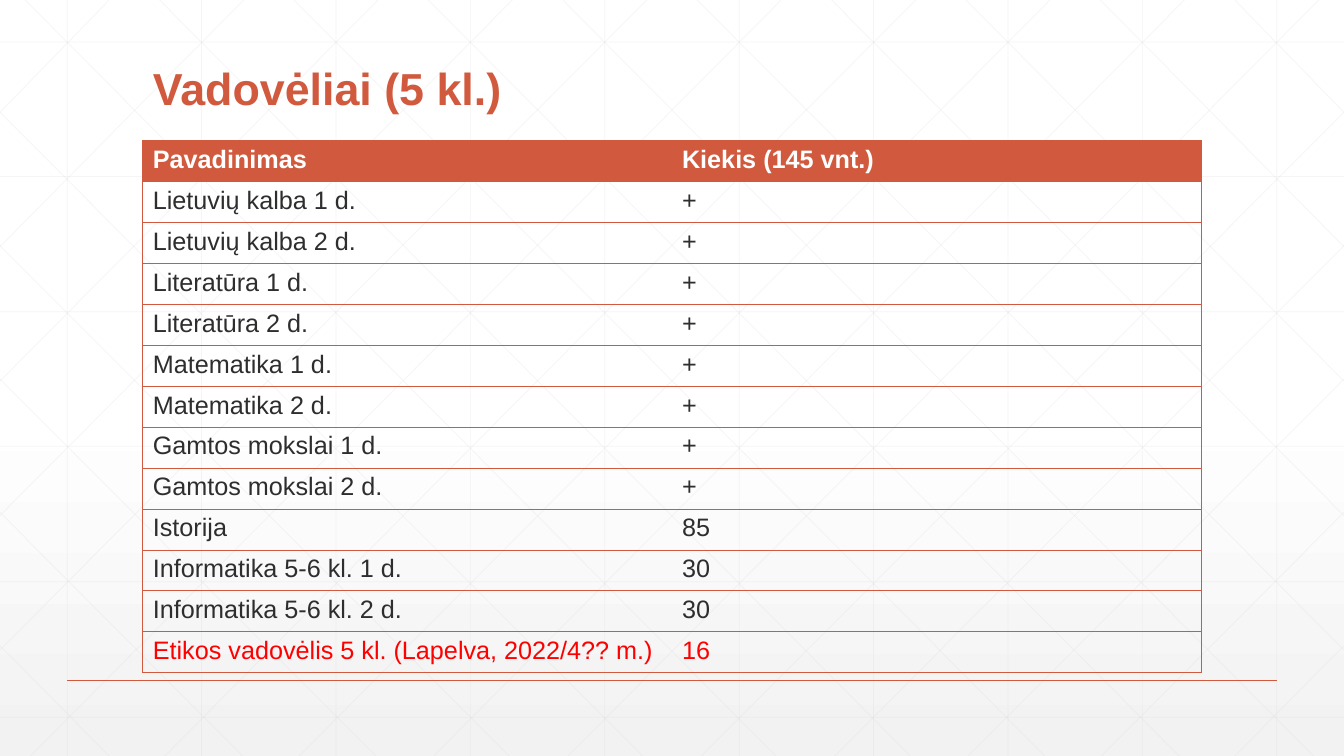
from lxml.etree import SubElement
from pptx import Presentation
from pptx.dml.color import RGBColor
from pptx.enum.shapes import MSO_CONNECTOR
from pptx.enum.text import MSO_ANCHOR, MSO_AUTO_SIZE, PP_ALIGN
from pptx.oxml.ns import qn
from pptx.util import Pt

PX = 9525
WIDTH, HEIGHT = 1280, 720
FONT = "Arial"
ACCENT, TEXT, ALERT, WHITE, GRID = "D15A3E", "2D2E2D", "FF0000", "FFFFFF", "D9D9D9"

HEADER = ("Pavadinimas", "Kiekis (145 vnt.)")
BOOKS = [
    ("Lietuvių kalba 1 d.", "+"),
    ("Lietuvių kalba 2 d.", "+"),
    ("Literatūra 1 d.", "+"),
    ("Literatūra 2 d.", "+"),
    ("Matematika 1 d.", "+"),
    ("Matematika 2 d.", "+"),
    ("Gamtos mokslai 1 d.", "+"),
    ("Gamtos mokslai 2 d.", "+"),
    ("Istorija", "85"),
    ("Informatika 5-6 kl. 1 d.", "30"),
    ("Informatika 5-6 kl. 2 d.", "30"),
]
ETHICS = ("Etikos vadovėlis 5 kl. (Lapelva, 2022/4?? m.)", "16")


def px(*values):
    return [round(v * PX) for v in values]


def rgb(color):
    return RGBColor.from_string(color)


def style(p, size, color, bold=False):
    f = p.font
    f.name, f.size, f.bold = FONT, Pt(size), bold
    f.color.rgb = rgb(color)


def add_line(shapes, ends, color, width, alpha=None):
    """Draw a straight line; alpha is its opacity in percent."""
    line = shapes.add_connector(MSO_CONNECTOR.STRAIGHT, *px(*ends))
    line.line.color.rgb = rgb(color)
    line.line.width = Pt(width)
    sppr = line.element.spPr
    if alpha is not None:
        clr = sppr.find(f".//{qn('a:srgbClr')}")
        SubElement(clr, qn("a:alpha"), val=str(alpha * 1000))
    SubElement(sppr, qn("a:effectLst"))


def grid_lines():
    """List the ends of the square grid and of its mirrored diagonals."""
    verticals = [(x, 0, x, HEIGHT) for x in range(64, WIDTH, 128)]
    levels = [40 + 643 * i // 5 for i in range(6)]
    horizontals = [(0, y, WIDTH, y) for y in levels]
    full = [(24 + 128 * i, 0, 739 + 128 * i, HEIGHT) for i in range(5)]
    upper = [(664 + 128 * i, 0, WIDTH, 619 - 128 * i) for i in range(5)]
    lower = [(0, 107 + 127 * i, 612 - 127 * i, HEIGHT) for i in range(5)]
    falling = full + upper + lower
    rising = [(WIDTH - x1, y1, WIDTH - x2, y2) for x1, y1, x2, y2 in falling]
    return verticals + horizontals + falling + rising


def add_backdrop(s):
    fill = s.background.fill
    fill.gradient()
    fill.gradient_angle = 270
    for stop, color, position in zip(fill.gradient_stops, (WHITE, "F2F2F2"), (0.53, 1)):
        stop.color.rgb = rgb(color)
        stop.position = position
    grid = s.shapes.add_group_shape()
    for ends in grid_lines():
        add_line(grid.shapes, ends, GRID, 0.5, 25)
    add_line(s.shapes, (64, 648, 1216, 648), ACCENT, 1)


def add_title(s, text, left, top, width, height):
    sp = s.shapes.title
    sp.element.getparent().append(sp.element)  # bring in front of the grid
    sp.left, sp.top, sp.width, sp.height = px(left, top, width, height)
    tf = sp.text_frame
    tf.text = text
    tf.word_wrap = True
    tf.auto_size = MSO_AUTO_SIZE.NONE
    tf.vertical_anchor = MSO_ANCHOR.BOTTOM
    p = tf.paragraphs[0]
    p.alignment = PP_ALIGN.LEFT
    p.line_spacing = 0.9
    style(p, 32, ACCENT, True)


def set_borders(cell, visible):
    """Draw the visible sides of a cell and clear the others."""
    tcpr = cell._tc.get_or_add_tcPr()
    for i, side in enumerate("LRTB"):
        ln = SubElement(tcpr, qn(f"a:ln{side}"), w=str(Pt(0.5)))
        if side in visible:
            SubElement(SubElement(ln, qn("a:solidFill")), qn("a:srgbClr"), val=ACCENT)
        else:
            SubElement(ln, qn("a:noFill"))
        tcpr.insert(i, ln)


def add_book_table(s, left, top, width, row_height):
    rows = [HEADER, *BOOKS, ETHICS]
    box = px(left, top, width, row_height * len(rows))
    table = s.shapes.add_table(len(rows), len(HEADER), *box).table
    table.horz_banding = False
    for row, values in zip(table.rows, rows):
        row.height = px(row_height)[0]
        is_header = values is HEADER
        color = WHITE if is_header else ALERT if values is ETHICS else TEXT
        for cell, value, outer in zip(row.cells, values, "LR"):
            cell.text = value
            style(cell.text_frame.paragraphs[0], 18, color, is_header)
            if is_header:
                cell.fill.solid()
                cell.fill.fore_color.rgb = rgb(ACCENT)
            else:
                cell.fill.background()
            set_borders(cell, outer + "TB")


def main():
    prs = Presentation()
    prs.slide_width, prs.slide_height = px(WIDTH, HEIGHT)
    s = prs.slides.add_slide(prs.slide_layouts[5])
    add_backdrop(s)
    add_title(s, "Vadovėliai (5 kl.)", 136, 53, 1008, 62)
    add_book_table(s, 136, 134, 1008, 39)
    prs.save("out.pptx")


if __name__ == "__main__":
    main()
